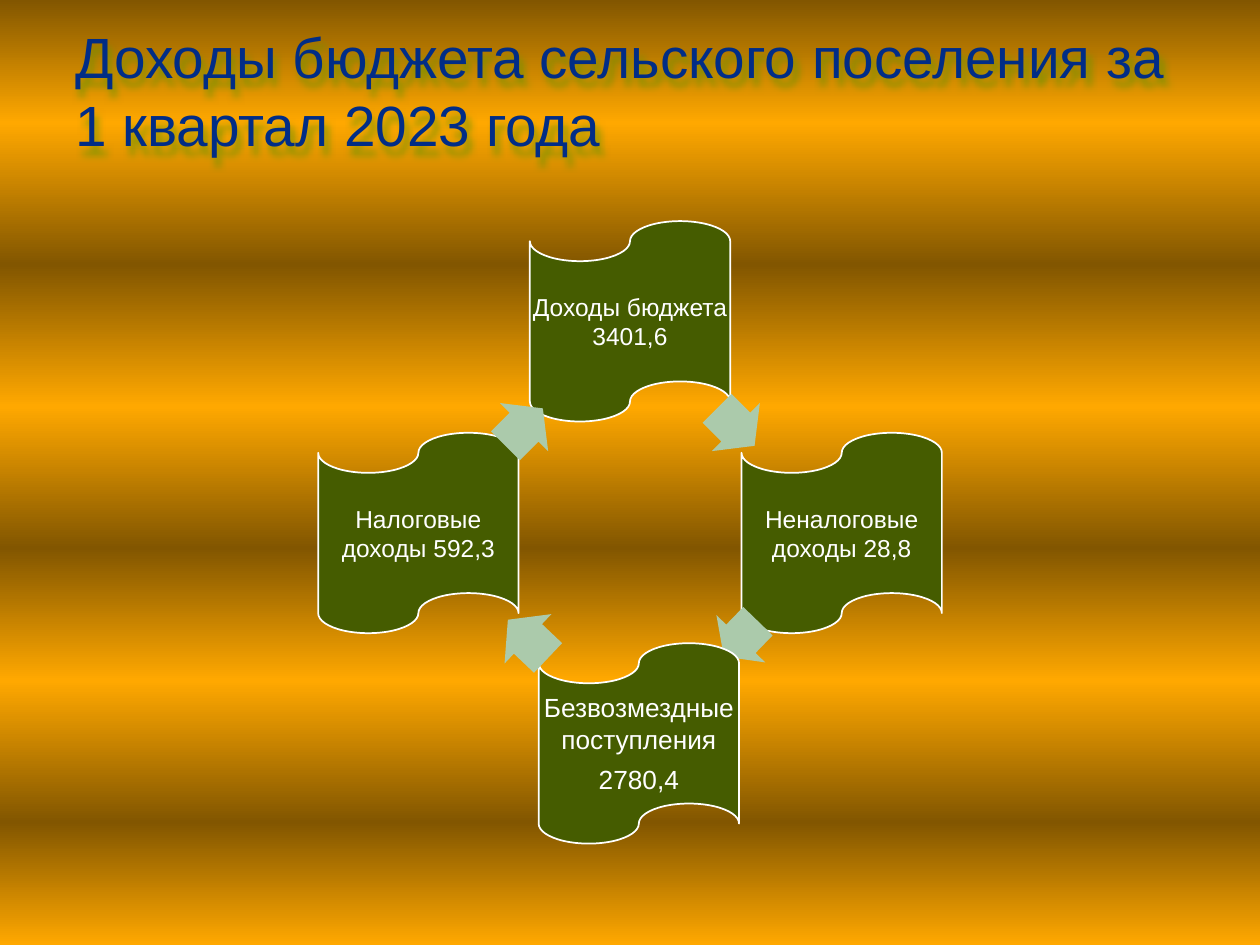
"""Build a slide showing the budget income of a rural settlement as a cycle."""
from lxml import etree
from pptx import Presentation
from pptx.dml.color import RGBColor
from pptx.enum.shapes import MSO_SHAPE
from pptx.enum.text import MSO_ANCHOR, PP_ALIGN
from pptx.oxml import parse_xml
from pptx.oxml.ns import nsdecls, qn
from pptx.util import Inches, Pt

TAPE, ARROW = MSO_SHAPE.FLOWCHART_PUNCHED_TAPE, MSO_SHAPE.RIGHT_ARROW
MIDDLE, CENTER = MSO_ANCHOR.MIDDLE, PP_ALIGN.CENTER
WIDTH, HEIGHT = 10, 7.5
BROWN, ORANGE, GREEN, SAGE = "825600", "FFA800", "455C00", "ABCAAB"
NAVY, WHITE, GLOW = "012D86", "FFFFFF", "6E9400"


def color(value):
    return RGBColor.from_string(value)


def add_centered(kind, x, y, width, height, fill):
    shape = slide.shapes.add_shape(kind, Inches(x - width / 2), Inches(y - height / 2),
                                   Inches(width), Inches(height))
    shape.shadow.inherit = False
    shape.fill.solid()
    shape.fill.fore_color.rgb = color(fill)
    return shape


prs = Presentation()
prs.slide_width, prs.slide_height = Inches(WIDTH), Inches(HEIGHT)
slide = prs.slides.add_slide(prs.slide_layouts[6])

backdrop = slide.background.fill
backdrop.gradient()
gradient = slide.background._cSld.find(".//" + qn("a:gradFill"))
for part in list(gradient):
    gradient.remove(part)
stops = etree.SubElement(gradient, qn("a:gsLst"))
for index, share in enumerate([0, 13, 28, 43, 58, 72, 87, 100]):
    stop = etree.SubElement(stops, qn("a:gs"), pos=str(share * 1000))
    etree.SubElement(stop, qn("a:srgbClr"), val=ORANGE if index % 2 else BROWN)
etree.SubElement(gradient, qn("a:lin"), ang="5400000", scaled="0")

heading = slide.shapes.add_textbox(Inches(0.05 * WIDTH), Inches(0.21),
                                   Inches(0.9 * WIDTH), Inches(1.01))
heading.text_frame.word_wrap = True
heading.text_frame.vertical_anchor = MIDDLE
title = heading.text_frame.paragraphs[0]
title.text = "Доходы бюджета сельского поселения за 1 квартал 2023 года"
title.font.name, title.font.size = "Arial", Pt(32.4)
title.font.color.rgb = color(NAVY)
heading._element.spPr.append(parse_xml(
    f'<a:effectLst {nsdecls("a")}><a:outerShdw blurRad="50800" dist="57150" dir="4200000">'
    f'<a:srgbClr val="{GLOW}"><a:alpha val="80000"/></a:srgbClr></a:outerShdw></a:effectLst>'))

MID_X, MID_Y, RADIUS, SIDE = WIDTH / 2, 4.23, 1.68, 1.59
ARROW_X, ARROW_Y = RADIUS / 2, RADIUS / 2
steps = [
    (0, -RADIUS, 14, ["Доходы бюджета 3401,6"], ARROW_X, -ARROW_Y, 0.42, 45),
    (RADIUS, 0, 14, ["Неналоговые доходы 28,8"], 0.88, ARROW_Y, 0.39, 134.1),
    (0.07, 1.67, 15, ["Безвозмездные поступления", "2780,4"], -0.81, ARROW_Y, 0.44, 223.5),
    (-RADIUS, 0, 14, ["Налоговые доходы 592,3"], -ARROW_X, -ARROW_Y, 0.42, 315),
]
for dx, dy, size, lines, arrow_dx, arrow_dy, arrow_length, angle in steps:
    income = add_centered(TAPE, MID_X + dx, MID_Y + dy, SIDE, SIDE, GREEN)
    income.line.color.rgb = color(WHITE)
    income.line.width = Pt(1)
    frame = income.text_frame
    frame.word_wrap = True
    frame.vertical_anchor = MIDDLE
    frame.margin_left = frame.margin_right = Inches(0.02)
    frame.margin_top = frame.margin_bottom = Inches(0.02)
    frame.text = "\n".join(lines)
    for paragraph in frame.paragraphs:
        paragraph.alignment = CENTER
        paragraph.space_after = Pt(0.35 * size)
        paragraph.font.name, paragraph.font.size = "Arial", Pt(size)
        paragraph.font.color.rgb = color(WHITE)

    arrow = add_centered(ARROW, MID_X + arrow_dx, MID_Y + arrow_dy, arrow_length, 0.54, SAGE)
    arrow.line.fill.background()
    arrow.adjustments[0], arrow.adjustments[1] = 0.6, 0.5
    arrow.rotation = angle

prs.save("out.pptx")
